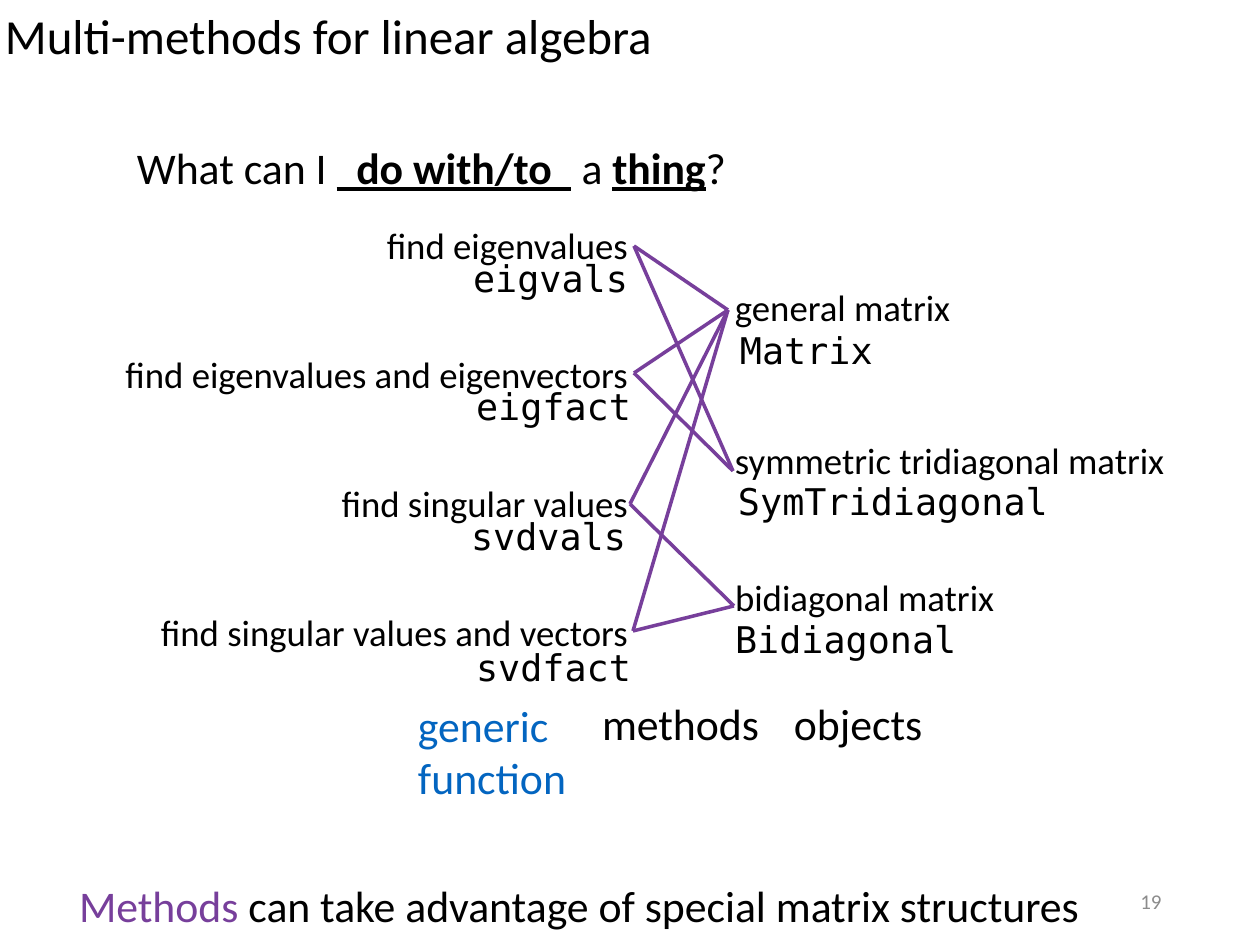
from dataclasses import dataclass

from pptx import Presentation
from pptx import util as u
from pptx.dml.color import RGBColor
from pptx.enum import shapes, text
from pptx.oxml.ns import qn

PX = 914400 // 126  # EMU per px, 126 px to the inch


@dataclass(frozen=True)
class Theme:
    ink: str = "000000"
    method: str = "773F9B"
    generic: str = "0365C0"
    muted: str = "8C8C8C"
    prose: str = "Calibri"
    code: str = "DejaVu Sans Mono"
    title: int = 28
    body: int = 25
    label: int = 21
    number: int = 12
    line: int = 2


T = Theme()
LEFT, RIGHT = text.PP_ALIGN.LEFT, text.PP_ALIGN.RIGHT
HEIGHTS = {T.title: 69, T.body: 63, T.label: 54, T.number: 50}

# Content: each statement is left, top, width, size, paragraphs;
# a run is its words, colour and style (b bold, u underlined)
STATEMENTS = [
    (0, 0, 667, T.title, [[("Multi-methods for linear algebra", T.ink, "")]]),
    (132, 136, 607, T.body, [[
        ("What can I ", T.ink, ""), ("  ", T.ink, "u"), ("do with/to", T.ink, "bu"),
        ("  ", T.ink, "u"), (" a ", T.ink, ""), ("thing", T.ink, "bu"), ("?", T.ink, "")]]),
    (413, 693, 160, T.body, [[("generic", T.generic, "")], [("function", T.generic, "")]]),
    (597, 692, 169, T.body, [[("methods", T.ink, "")]]),
    (789, 692, 140, T.body, [[("objects", T.ink, "")]]),
    (74, 874, 1027, T.body, [[
        ("Methods", T.method, ""),
        (" can take advantage of special matrix structures", T.ink, "")]]),
]

# Task, its width, function, function left and top, line anchor
FUNCTIONS = [
    ("find eigenvalues", 255, "eigvals", 467, 251, (634, 246)),
    ("find eigenvalues and eigenvectors", 522, "eigfact", 470, 379, (634, 373)),
    ("find singular values", 300, "svdvals", 465, 509, (630, 504)),
    ("find singular values and vectors", 484, "svdfact", 470, 640, (633, 631)),
]
TASK_RIGHT, TASK_TOP, TASK_STEP, FUNCTION_WIDTH = 633, 218, 129, 166

# Matrix, its top and width, type, type left, top and width, line anchor
MATRICES = [
    ("general matrix", 280, 229, "Matrix", 735, 323, 144, (728, 310)),
    ("symmetric tridiagonal matrix", 433, 445, "SymTridiagonal", 733, 474, 321, (733, 471)),
    ("bidiagonal matrix", 570, 272, "Bidiagonal", 730, 612, 233, (734, 606)),
]
MATRIX_LEFT = 730

# Methods: function index, matrix index
METHODS = [(0, 0), (1, 0), (2, 0), (3, 0), (0, 1), (1, 1), (2, 2), (3, 2)]


def add_text(slide, left, top, width, size, paragraphs, font=T.prose, align=LEFT, fit=True):
    height = HEIGHTS[size] + 53 * (len(paragraphs) - 1)
    box = slide.shapes.add_textbox(*(v * PX for v in (left, top, width, height)))
    frame = box.text_frame
    frame.vertical_anchor = text.MSO_ANCHOR.MIDDLE
    frame.word_wrap = not fit
    if fit:
        frame.auto_size = text.MSO_AUTO_SIZE.SHAPE_TO_FIT_TEXT
        frame.margin_left = frame.margin_right = 5 * PX
        frame.margin_top = frame.margin_bottom = 5 * PX
    for i, runs in enumerate(paragraphs):
        paragraph = frame.add_paragraph() if i else frame.paragraphs[0]
        paragraph.alignment = align
        for words, colour, style in runs:
            run = paragraph.add_run()
            run.text = words
            run.font.name, run.font.size = font, u.Pt(size)
            run.font.bold, run.font.underline = "b" in style, "u" in style
            run.font.color.rgb = RGBColor.from_string(colour)


def add_label(slide, left, top, width, words, font, align):
    add_text(slide, left, top, width, T.label, [[(words, T.ink, "")]], font, align)


def add_method(slide, start, end):
    ends = [v * PX for v in start + end]
    line = slide.shapes.add_connector(shapes.MSO_CONNECTOR.STRAIGHT, *ends)
    line.line.color.rgb = RGBColor.from_string(T.method)
    line.line.width = u.Pt(T.line)
    properties = line.line._get_or_add_ln().getparent()
    properties.append(properties.makeelement(qn("a:effectLst"), {}))


def main():
    deck = Presentation()
    deck.slide_width, deck.slide_height = u.Inches(10), u.Inches(7.5)
    slide = deck.slides.add_slide(deck.slide_layouts[6])

    # Title, question, column captions and conclusion
    for statement in STATEMENTS:
        add_text(slide, *statement)

    # Methods joining functions to matrices
    for function, matrix in METHODS:
        add_method(slide, FUNCTIONS[function][-1], MATRICES[matrix][-1])

    # Generic functions
    for i, (task, width, function, left, top, _) in enumerate(FUNCTIONS):
        add_label(slide, TASK_RIGHT - width, TASK_TOP + i * TASK_STEP, width,
                  task, T.prose, RIGHT)
        add_label(slide, left, top, FUNCTION_WIDTH, function, T.code, RIGHT)

    # Matrix objects
    for matrix, top, width, kind, kind_left, kind_top, kind_width, _ in MATRICES:
        add_label(slide, MATRIX_LEFT, top, width, matrix, T.prose, LEFT)
        add_label(slide, kind_left, kind_top, kind_width, kind, T.code, LEFT)

    # Slide number
    add_text(slide, 890, 876, 284, T.number, [[("19", T.muted, "")]], align=RIGHT, fit=False)

    deck.save("out.pptx")


if __name__ == "__main__":
    main()
